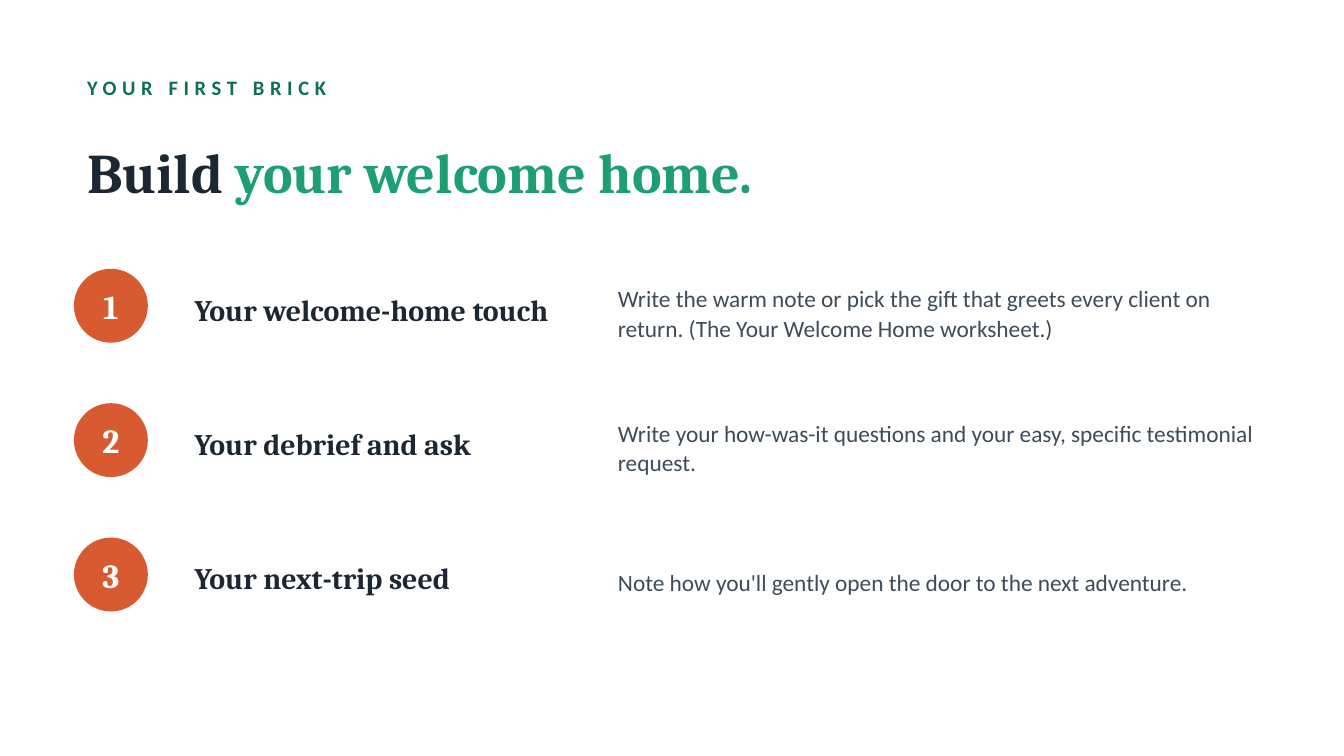
"""Build the "Your first brick" slide with three numbered steps."""
from pptx import Presentation
from pptx.dml.color import RGBColor
from pptx.enum.shapes import MSO_SHAPE
from pptx.enum.text import MSO_ANCHOR, PP_ALIGN
from pptx.util import Inches, Pt

WHITE = RGBColor(0xFF, 0xFF, 0xFF)
INK = RGBColor(0x1C, 0x27, 0x33)
SLATE = RGBColor(0x3F, 0x4B, 0x59)
DARK_GREEN = RGBColor(0x0F, 0x6E, 0x56)
GREEN = RGBColor(0x1D, 0x9E, 0x75)
ORANGE = RGBColor(0xD8, 0x5A, 0x30)
SERIF, SANS = "Cambria", "Calibri"

KICKER = "YOUR FIRST BRICK"
TITLE = [("Build ", INK), ("your welcome home.", GREEN)]
STEPS = [
    ("Your welcome-home touch",
     "Write the warm note or pick the gift that greets every client on return. "
     "(The Your Welcome Home worksheet.)"),
    ("Your debrief and ask",
     "Write your how-was-it questions and your easy, specific testimonial request."),
    ("Your next-trip seed",
     "Note how you'll gently open the door to the next adventure."),
]
WIDTH = 10
HEIGHT = WIDTH * 9 / 16
LEFT, TOP, PITCH, DOT = 0.55, 2, 1, 0.55


def add_text(s, box, runs, font, size, bold=True, align=None, spacing=None, tracking=None):
    tf = s.shapes.add_textbox(*map(Inches, box)).text_frame
    tf.word_wrap = True
    tf.vertical_anchor = MSO_ANCHOR.MIDDLE
    p = tf.paragraphs[0]
    p.alignment = align
    p.line_spacing = spacing
    for text, color in runs:
        r = p.add_run()
        r.text = text
        r.font.name = font
        r.font.size = Pt(size)
        r.font.bold = bold
        r.font.color.rgb = color
        if tracking:
            r.font._element.set("spc", str(tracking * 100))


def add_step(s, number, heading, detail):
    y = TOP + (number - 1) * PITCH
    dot = (LEFT, y, DOT, DOT)
    sp = s.shapes.add_shape(MSO_SHAPE.OVAL, *map(Inches, dot))
    sp.shadow.inherit = False
    sp.fill.solid()
    sp.fill.fore_color.rgb = ORANGE
    sp.line.fill.background()
    add_text(s, dot, [(str(number), WHITE)], SERIF, 18, align=PP_ALIGN.CENTER)
    add_text(s, (1.35, y - 0.05, 3, 0.7), [(heading, INK)], SERIF, 16)
    add_text(s, (4.5, y - 0.05, 5, 0.75), [(detail, SLATE)], SANS, 12.5,
             bold=False, spacing=1.05)


def main():
    prs = Presentation()
    prs.slide_width, prs.slide_height = Inches(WIDTH), Inches(HEIGHT)
    s = prs.slides.add_slide(prs.slide_layouts[6])
    s.background.fill.solid()
    s.background.fill.fore_color.rgb = WHITE
    add_text(s, (LEFT, 0.5, 8.9, 0.3), [(KICKER, DARK_GREEN)], SANS, 11, tracking=3)
    add_text(s, (LEFT, 0.85, 8.9, 0.85), TITLE, SERIF, 30)
    for number, (heading, detail) in enumerate(STEPS, 1):
        add_step(s, number, heading, detail)
    prs.save("out.pptx")


if __name__ == "__main__":
    main()
